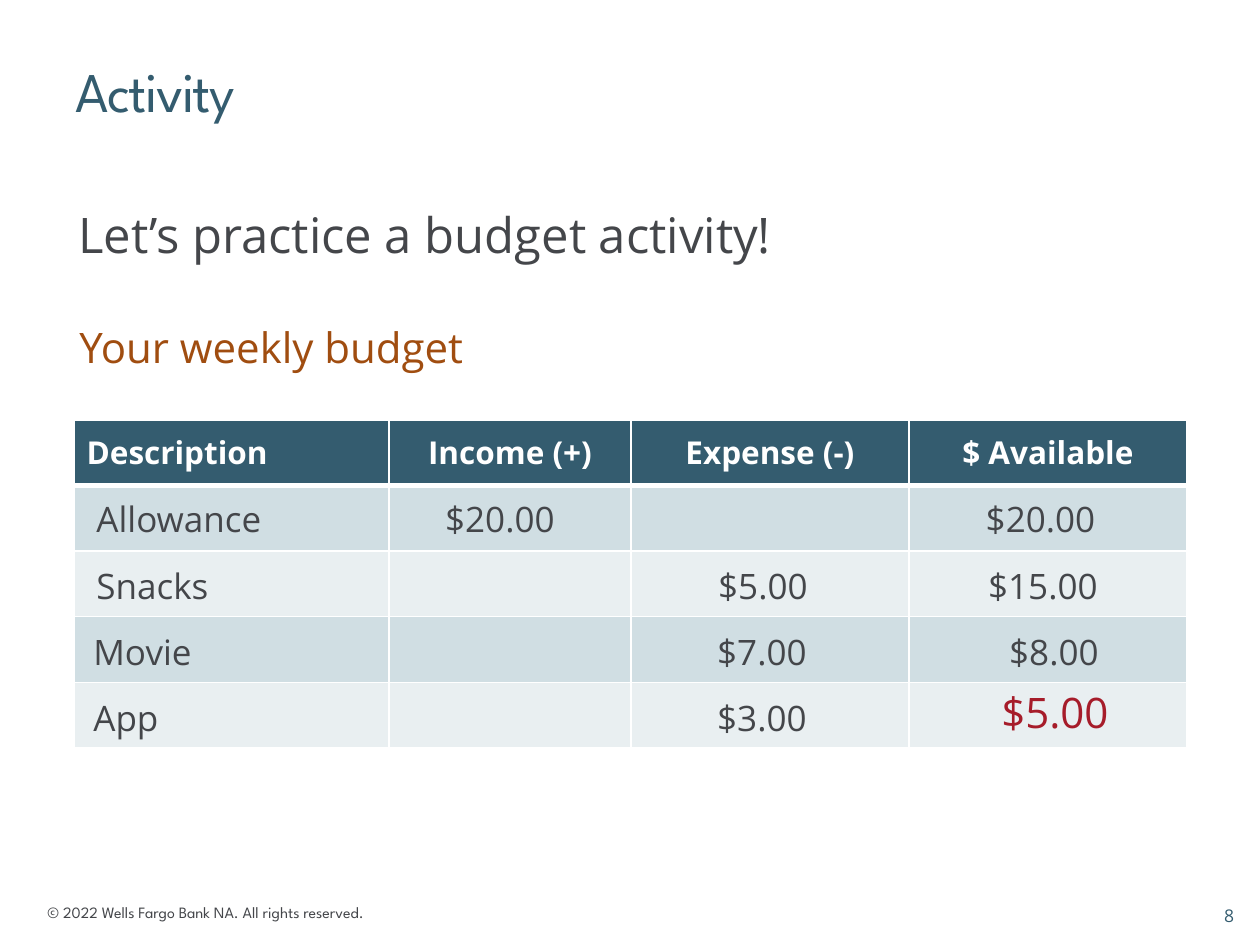
"""Build the weekly budget activity slide."""
import pptx
import pptx.chart
import pptx.dml.color
import pptx.enum.text
import pptx.oxml
import pptx.oxml.ns
import pptx.util

SCALE = 914400 / 126
HEADING_FONT, BODY_FONT = "League Spartan", "Open Sans"
TEAL, GRAY, RUST, RED, WHITE = "345C6F", "44464A", "A04D10", "A61C2A", "FFFFFF"
BANDS = ["D0DEE3", "E9EFF1"]
LEFT, CENTER, RIGHT = (pptx.enum.text.PP_ALIGN.LEFT, pptx.enum.text.PP_ALIGN.CENTER,
                       pptx.enum.text.PP_ALIGN.RIGHT)

HEADERS = ["Description", "Income (+)", "Expense (-)", "$ Available"]
COLUMN_WIDTHS = [315, 242, 278, 278]
TABLE_LEFT, TABLE_TOP, TABLE_HEIGHT = 74, 420, 328
ENTRY_TOPS = [491, 558, 624, 690]
ENTRY_HEIGHT = 55
# Each entry: text, left, width
ENTRIES = [
    [("Allowance", 84, 257), ("$20.00", 411, 178), ("$20.00", 950, 181)],
    [("Snacks", 84, 257), ("$5.00", 674, 178), ("$15.00", 954, 178)],
    [("Movie", 81, 255), ("$7.00", 673, 178), ("$8.00", 977, 154)],
    [("App", 81, 255), ("$3.00", 673, 178)],
]
# Each line: text, box, size, font, colour
LINES = [
    ("Let’s practice a budget activity!", (66, 198, 989, 72), 28, BODY_FONT, GRAY),
    ("Your weekly budget", (67, 315, 989, 63), 24, BODY_FONT, RUST),
]


def px(length):
    return pptx.util.Emu(round(length * SCALE))


def color(code):
    return pptx.dml.color.RGBColor.from_string(code)


def write(frame, text, size, font, code, align=LEFT, bold=False):
    paragraph = frame.paragraphs[0]
    paragraph.alignment = align
    run = paragraph.add_run()
    run.text = text
    run.font.size = pptx.util.Pt(size)
    run.font.name = font
    run.font.bold = bold
    run.font.color.rgb = color(code)
    return run


def add_text(slide, text, box, size, font, code, align=LEFT, inset=True, wrap=True):
    frame = slide.shapes.add_textbox(*map(px, box)).text_frame
    frame.word_wrap = wrap
    if not inset:
        frame.margin_left = frame.margin_top = frame.margin_right = frame.margin_bottom = 0
    return write(frame, text, size, font, code, align), frame.paragraphs[0]


def set_borders(cell, top, bottom):
    properties = cell._tc.get_or_add_tcPr()
    widths = [("lnL", 1), ("lnR", 1), ("lnT", top), ("lnB", bottom)]
    for index, (side, width) in enumerate(widths):
        properties.insert(index, pptx.oxml.parse_xml(
            f'<a:{side} {pptx.oxml.ns.nsdecls("a")} w="{pptx.util.Pt(width)}">'
            f'<a:solidFill><a:srgbClr val="{WHITE}"/></a:solidFill></a:{side}>'))


def add_budget(slide):
    table = slide.shapes.add_table(
        len(ENTRIES) + 1, len(HEADERS), px(TABLE_LEFT), px(TABLE_TOP),
        px(sum(COLUMN_WIDTHS)), px(TABLE_HEIGHT)).table
    for column, width in zip(table.columns, COLUMN_WIDTHS):
        column.width = px(width)
    for row_index, row in enumerate(table.rows):
        for column_index, cell in enumerate(row.cells):
            cell.fill.solid()
            cell.fill.fore_color.rgb = color(BANDS[(row_index - 1) % 2] if row_index else TEAL)
            set_borders(cell, 3 if row_index == 1 else 1, 1 if row_index else 3)
            if row_index == 0:
                cell.vertical_anchor = pptx.enum.text.MSO_ANCHOR.MIDDLE
                write(cell.text_frame, HEADERS[column_index], 18, BODY_FONT, WHITE,
                      CENTER if column_index else LEFT, True)
    for top, entries in zip(ENTRY_TOPS, ENTRIES):
        for index, (text, left, width) in enumerate(entries):
            add_text(slide, text, (left, top, width, ENTRY_HEIGHT), 20, BODY_FONT, GRAY,
                     CENTER if index else LEFT)
    add_text(slide, "$5.00", (966, 680, 178, 63), 24, BODY_FONT, RED, CENTER)


def main():
    deck = pptx.Presentation()
    deck.slide_width, deck.slide_height = px(1260), px(945)
    slide = deck.slides.add_slide(deck.slide_layouts[6])
    add_text(slide, "© 2022 Wells Fargo Bank NA. All rights reserved.",
             (35, 897, 384, 32), 9, HEADING_FONT, GRAY, wrap=False)
    title, title_line = add_text(slide, "Activity", (76, 53, 1109, 122), 32,
                                 HEADING_FONT, TEAL, inset=False)
    title_line.line_spacing = 1.05
    title.font._element.set("spc", "-100")
    for line in LINES:
        add_text(slide, *line)
    add_budget(slide)
    add_text(slide, "8", (1184, 905, 50, 40), 10, BODY_FONT, TEAL, RIGHT, inset=False)
    deck.save("out.pptx")


if __name__ == "__main__":
    main()
